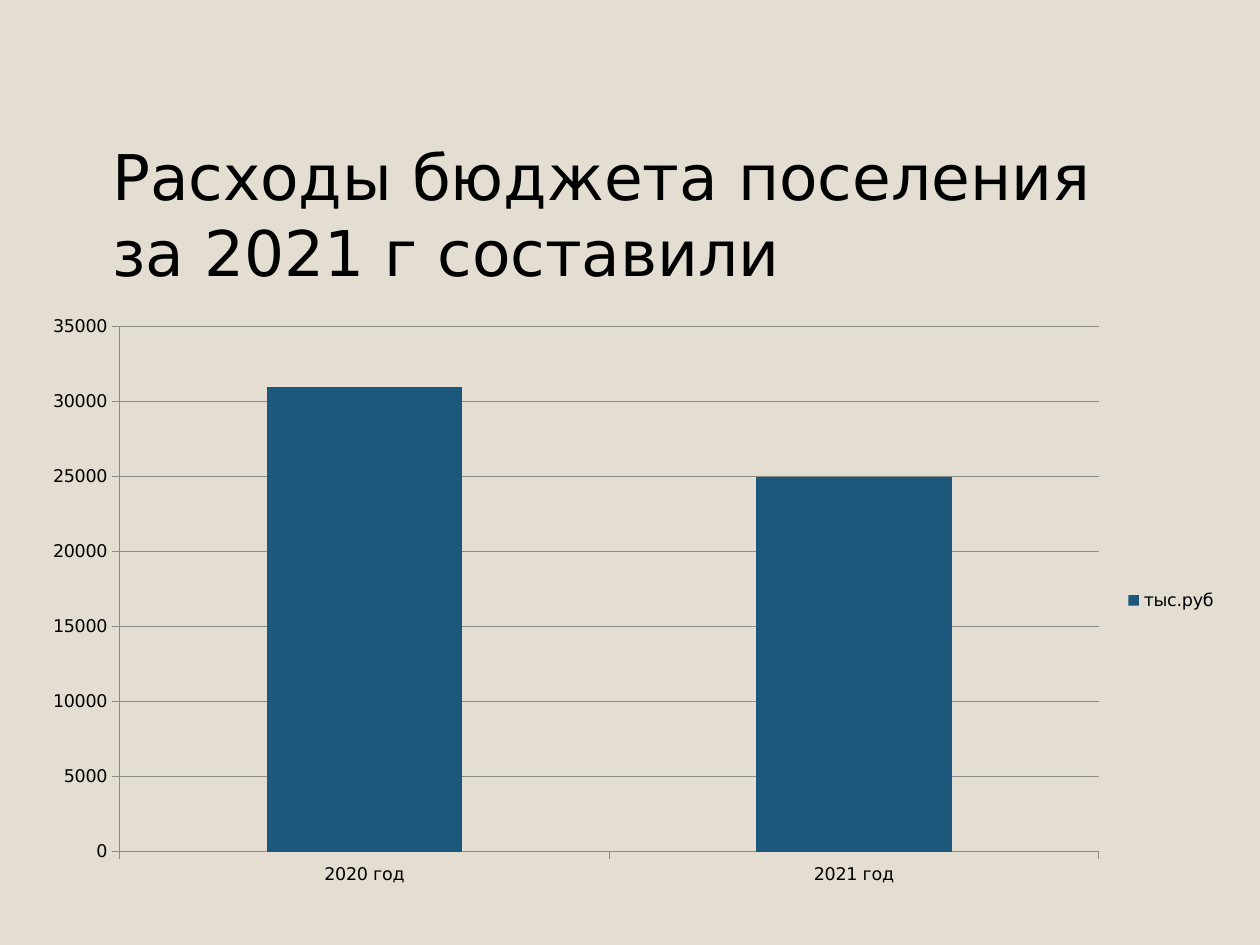
"""Builds the slide on the settlement's budget spending."""
from pptx import Presentation, util as u
from pptx.chart.data import CategoryChartData
from pptx.dml.color import RGBColor
from pptx.enum import chart as ch, text

COLORS = {"background": "E3DED1", "text": "000000", "bar": "1B587C", "grid": "8B8B8B"}


class BudgetSlide:
    """Holds the style and the current slide."""

    font_name = "DejaVu Sans"

    def __init__(self, deck):
        self.slide = deck.slides.add_slide(deck.slide_layouts[5])
        self.paint(self.slide.background.fill, "background")

    def paint(self, fill, color):
        fill.solid()
        fill.fore_color.rgb = RGBColor.from_string(COLORS[color])

    def style_font(self, font, size):
        font.name = self.font_name
        font.size = u.Pt(size)
        font.bold = False
        font.color.rgb = RGBColor.from_string(COLORS["text"])

    def style_line(self, line):
        self.paint(line.fill, "grid")
        line.width = u.Pt(0.5)

    def title(self, wording, left, top, width, height):
        heading = self.slide.shapes.title
        heading.left, heading.top = u.Inches(left), u.Inches(top)
        heading.width, heading.height = u.Inches(width), u.Inches(height)
        frame = heading.text_frame
        frame.word_wrap = True
        frame.auto_size = text.MSO_AUTO_SIZE.NONE
        frame.vertical_anchor = text.MSO_ANCHOR.MIDDLE
        frame.margin_left = frame.margin_right = u.Inches(0.1)
        frame.margin_top, frame.margin_bottom = u.Inches(0.05), 0
        paragraph = frame.paragraphs[0]
        paragraph.alignment = text.PP_ALIGN.LEFT
        run = paragraph.add_run()
        run.text = wording
        self.style_font(run.font, 36)

    def column_chart(self, unit, spending, left, top, width, height):
        data = CategoryChartData()
        data.categories = list(spending)
        data.add_series(unit, list(spending.values()))
        chart = self.slide.shapes.add_chart(
            ch.XL_CHART_TYPE.COLUMN_STACKED, u.Inches(left), u.Inches(top),
            u.Inches(width), u.Inches(height), data).chart
        self.style_font(chart.font, 10)
        chart.has_title = False
        chart.has_legend = True
        chart.legend.position = ch.XL_LEGEND_POSITION.RIGHT
        chart.legend.include_in_layout = False

        columns = chart.plots[0]
        columns.gap_width, columns.overlap = 150, 100
        columns.vary_by_categories = False
        self.paint(columns.series[0].format.fill, "bar")

        for axis in (chart.category_axis, chart.value_axis):
            axis.major_tick_mark = ch.XL_TICK_MARK.OUTSIDE
            axis.minor_tick_mark = ch.XL_TICK_MARK.NONE
            self.style_line(axis.format.line)
        amounts = chart.value_axis
        amounts.minimum_scale, amounts.maximum_scale = 0, 35000
        amounts.major_unit = 5000
        amounts.has_major_gridlines = True
        self.style_line(amounts.major_gridlines.format.line)


def main():
    deck = Presentation()
    deck.slide_width, deck.slide_height = u.Inches(10), u.Inches(7.5)
    budget = BudgetSlide(deck)
    budget.title("Расходы бюджета поселения за 2021 г составили", 0.79, 1.09, 8.5, 1.16)
    budget.column_chart("тыс.руб", {"2020 год": 31000, "2021 год": 25000},
                        0.23, 2.42, 9.53, 4.69)
    deck.save("out.pptx")


if __name__ == "__main__":
    main()
